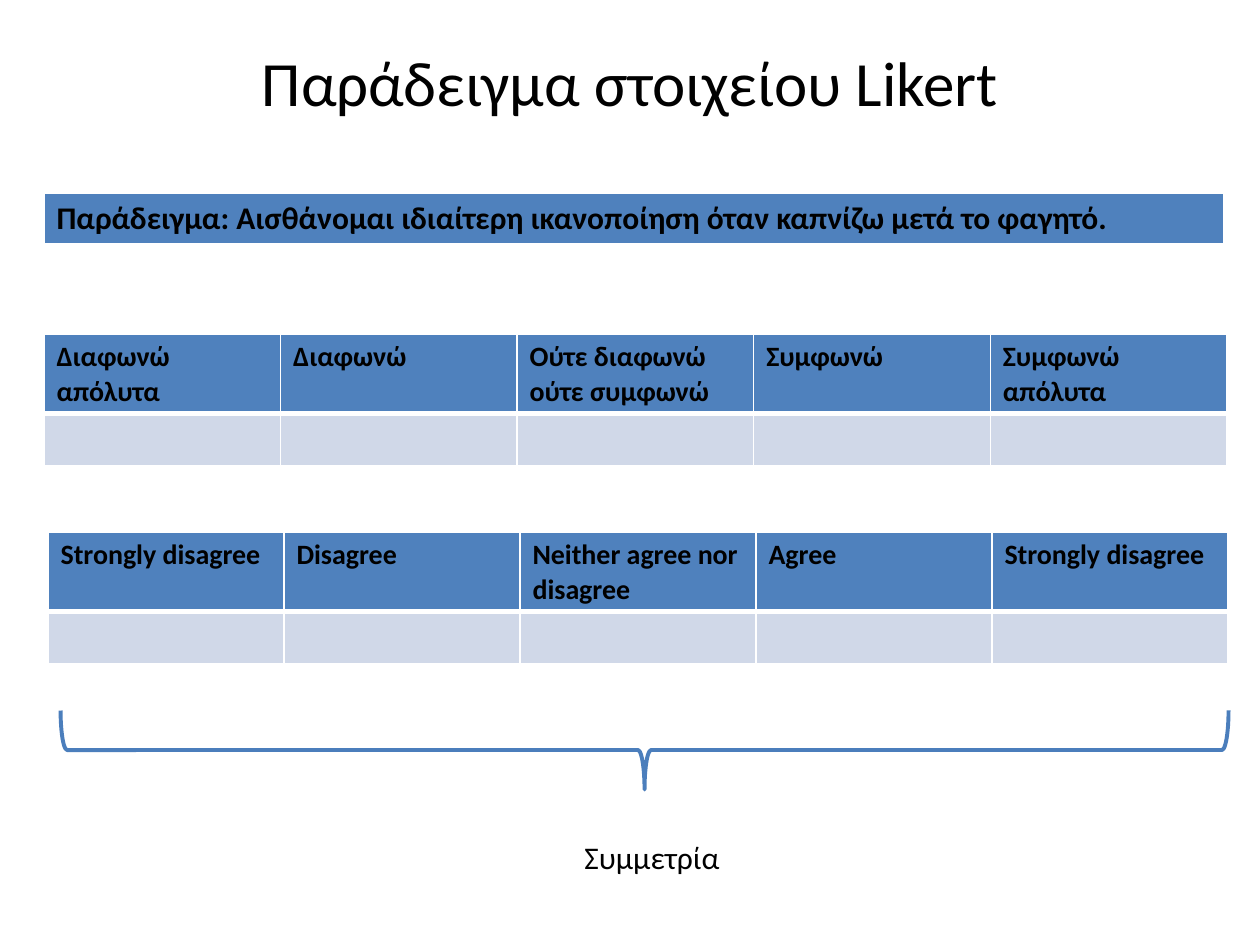
"""Build the slide showing a Likert item with its Greek and English answer scales."""
from dataclasses import dataclass

from lxml import etree
from pptx import Presentation
from pptx.dml.color import RGBColor as RGB
from pptx.enum.shapes import MSO_SHAPE as SHAPE
from pptx.enum.text import MSO_ANCHOR as ANCHOR, PP_ALIGN as ALIGN
from pptx.oxml.ns import qn
from pptx.util import Pt


@dataclass(frozen=True)
class Theme:
    font: str = "Calibri"
    ink: RGB = RGB(0x00, 0x00, 0x00)
    header: RGB = RGB(0x4F, 0x81, 0xBD)
    answer: RGB = RGB(0xD0, 0xD8, 0xE8)
    brace: RGB = RGB(0x4B, 0x7E, 0xBC)
    border: str = "FFFFFF"
    title_size: int = 36
    body_size: int = 18
    scale_size: int = 16


theme = Theme()
PX = 914400 / 126


def write(frame, text, size, bold=False, align=ALIGN.LEFT):
    paragraph = frame.paragraphs[0]
    paragraph.alignment = align
    run = paragraph.add_run()
    run.text = text
    run.font.name = theme.font
    run.font.size = Pt(size)
    run.font.bold = bold
    run.font.color.rgb = theme.ink


def style_cell(cell, color, bottom):
    properties = cell._tc.get_or_add_tcPr()
    for side, width in (("L", 1), ("R", 1), ("T", 1), ("B", bottom)):
        line = etree.SubElement(properties, qn(f"a:ln{side}"), w=str(Pt(width)))
        solid = etree.SubElement(line, qn("a:solidFill"))
        etree.SubElement(solid, qn("a:srgbClr"), val=theme.border)
    cell.fill.solid()
    cell.fill.fore_color.rgb = color


deck = Presentation()
deck.slide_width, deck.slide_height = round(1260 * PX), round(945 * PX)
slide = deck.slides.add_slide(deck.slide_layouts[6])
shapes = slide.shapes

captions = (
    ("Παράδειγμα στοιχείου Likert", theme.title_size, (63, 38, 1134, 87), ANCHOR.MIDDLE),
    ("Συμμετρία", theme.body_size, (478, 832, 348, 50), ANCHOR.TOP),
)
for text, size, box, anchor in captions:
    caption = shapes.add_textbox(*(round(length * PX) for length in box)).text_frame
    caption.word_wrap = True
    caption.vertical_anchor = anchor
    write(caption, text, size, align=ALIGN.CENTER)

english = ("Strongly disagree", "Disagree", "Neither agree nor disagree", "Agree", "Strongly disagree")
greek = ("Διαφωνώ απόλυτα", "Διαφωνώ", "Ούτε διαφωνώ ούτε συμφωνώ", "Συμφωνώ", "Συμφωνώ απόλυτα")
statement = ("Παράδειγμα: Αισθάνομαι ιδιαίτερη ικανοποίηση όταν καπνίζω μετά το φαγητό.",)
tables = (
    (english, theme.scale_size, (48, 532, 1180), (79, 52)),
    (greek, theme.scale_size, (44, 334, 1183), (79, 52)),
    (statement, theme.body_size, (44, 193, 1180), (52,)),
)
for headings, size, (left, top, width), heights in tables:
    box = (left, top, width, sum(heights))
    table = shapes.add_table(
        len(heights), len(headings), *(round(length * PX) for length in box)
    ).table
    for row, height in zip(table.rows, heights):
        row.height = round(height * PX)
    for column, heading in enumerate(headings):
        header = table.cell(0, column)
        style_cell(header, theme.header, 3)
        write(header.text_frame, heading, size, bold=True)
        for row in range(1, len(heights)):
            style_cell(table.cell(row, column), theme.answer, 1)

brace = shapes.add_shape(
    SHAPE.RIGHT_BRACE, *(round(length * PX) for length in (605, 166, 79, 1168))
)
brace.rotation = 270
brace._element.spPr.get_or_add_xfrm().set("flipH", "1")
brace.shadow.inherit = False
brace.fill.background()
brace.line.color.rgb = theme.brace
brace.line.width = Pt(2.25)

deck.save("out.pptx")
